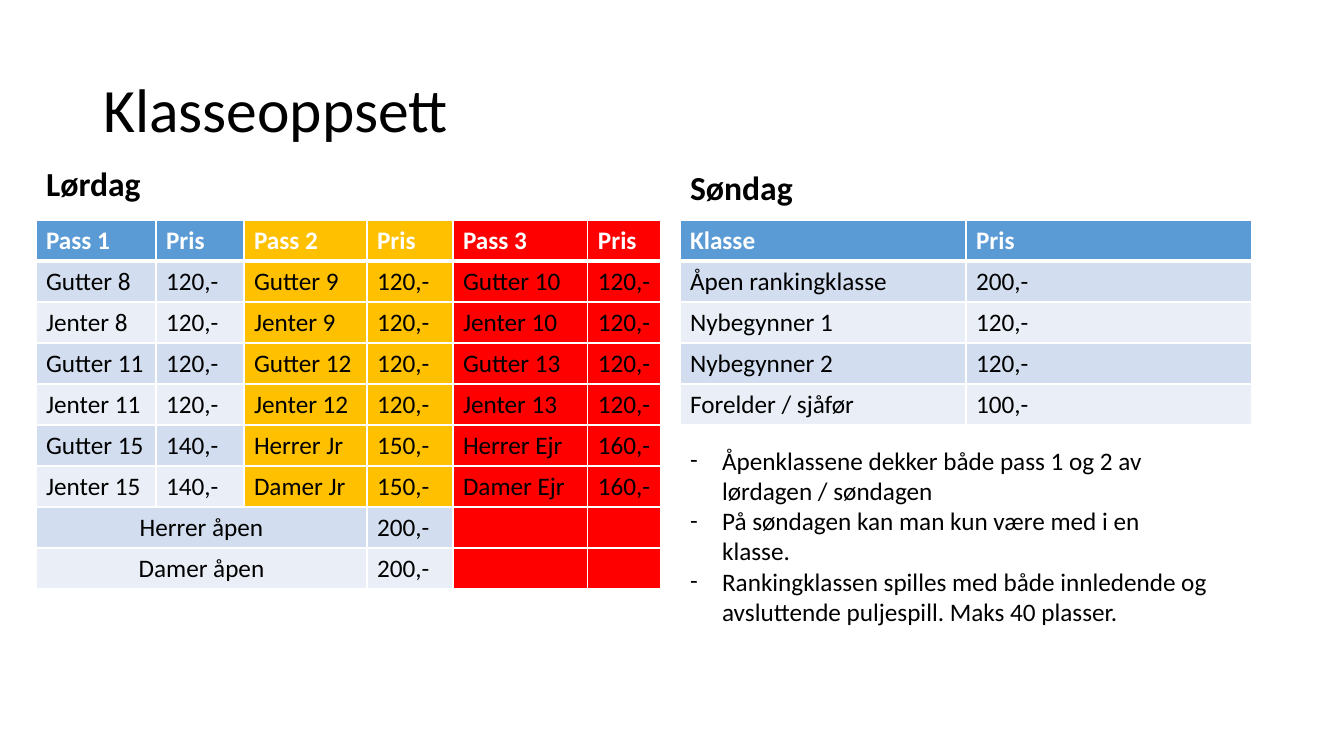
from dataclasses import dataclass

from lxml.etree import SubElement
from pptx import Presentation
from pptx.dml.color import RGBColor as RGB
from pptx.enum.text import MSO_ANCHOR as Anchor, MSO_AUTO_SIZE as AutoSize, PP_ALIGN as Align
from pptx.oxml.ns import qn
from pptx.util import Emu, Pt

EMU_PER_PX = 914400 / 100.8


@dataclass(frozen=True)
class Theme:
    """Colours, font and type sizes of the slide."""
    font: str = "Calibri"
    ink: str = "000000"
    paper: str = "FFFFFF"
    blue: str = "5B9BD5"
    gold: str = "FFC000"
    red: str = "FF0000"
    bands: tuple = ("D2DEEF", "EAEFF7")
    title_size: int = 44
    day_size: int = 24
    text_size: int = 18
    rule: int = 1
    header_rule: int = 3


THEME = Theme()

SATURDAY_WIDTHS = [120, 88, 123, 86, 135, 73]
SATURDAY_ACCENTS = [None, None, THEME.gold, THEME.gold, THEME.red, THEME.red]
SATURDAY = [
    ["Pass 1", "Pris", "Pass 2", "Pris", "Pass 3", "Pris"],
    ["Gutter 8", "120,-", "Gutter 9", "120,-", "Gutter 10", "120,-"],
    ["Jenter 8", "120,-", "Jenter 9", "120,-", "Jenter 10", "120,-"],
    ["Gutter 11", "120,-", "Gutter 12", "120,-", "Gutter 13", "120,-"],
    ["Jenter 11", "120,-", "Jenter 12", "120,-", "Jenter 13", "120,-"],
    ["Gutter 15", "140,-", "Herrer Jr", "150,-", "Herrer Ejr", "160,-"],
    ["Jenter 15", "140,-", "Damer Jr", "150,-", "Damer Ejr", "160,-"],
    ["Herrer åpen", "", "", "200,-", "", ""],
    ["Damer åpen", "", "", "200,-", "", ""],
]
OPEN_CLASS_ROWS = (7, 8)
SUNDAY_WIDTHS = [286, 286]
SUNDAY = [
    ["Klasse", "Pris"],
    ["Åpen rankingklasse", "200,-"],
    ["Nybegynner 1", "120,-"],
    ["Nybegynner 2", "120,-"],
    ["Forelder / sjåfør", "100,-"],
]
RULES = [
    "Åpenklassene dekker både pass 1 og 2 av lørdagen / søndagen",
    "På søndagen kan man kun være med i en klasse.",
    "Rankingklassen spilles med både innledende og avsluttende puljespill. Maks 40 plasser.",
]


def px(length):
    """Turn slide pixels into EMU."""
    return Emu(round(length * EMU_PER_PX))


def style_text(frame, size, color=THEME.ink, bold=False, align=Align.LEFT, leading=1.0):
    """Format every paragraph and run of a text frame."""
    for paragraph in frame.paragraphs:
        paragraph.alignment = align
        paragraph.line_spacing = leading
        paragraph.space_before = Pt(0)
        for run in paragraph.runs:
            run.font.name = THEME.font
            run.font.size = Pt(size)
            run.font.bold = bold
            run.font.color.rgb = RGB.from_string(color)


def place(placeholder, box, anchor):
    """Move a placeholder into its box and return its text frame."""
    placeholder.left, placeholder.top, placeholder.width, placeholder.height = map(px, box)
    frame = placeholder.text_frame
    frame.auto_size = AutoSize.NONE
    frame.word_wrap = True
    frame.vertical_anchor = anchor
    return frame


def fill_heading(placeholder, box, wording, size, anchor, bold):
    """Write a heading into a placeholder."""
    frame = place(placeholder, box, anchor)
    frame.text = wording
    style_text(frame, size, bold=bold, leading=0.9)


def fill_rules(placeholder, box):
    """Write the dashed list of competition rules."""
    frame = place(placeholder, box, Anchor.TOP)
    frame.text = "\n".join(RULES)
    for paragraph in frame.paragraphs:
        properties = paragraph._p.get_or_add_pPr()
        properties.set("marL", str(px(32)))
        properties.set("indent", str(-px(32)))
        SubElement(properties, qn("a:buFont"), typeface=THEME.font)
        SubElement(properties, qn("a:buChar"), char="-")
    style_text(frame, THEME.text_size)


def rule_cell(cell, top, bottom):
    """Draw the white rules around a table cell."""
    properties = cell._tc.get_or_add_tcPr()
    sides = {"L": THEME.rule, "R": THEME.rule, "T": top, "B": bottom}
    for side, weight in sides.items():
        line = SubElement(properties, qn(f"a:ln{side}"), w=str(Pt(weight)))
        SubElement(SubElement(line, qn("a:solidFill")), qn("a:srgbClr"), val=THEME.paper)


def add_price_table(slide, left, top, widths, entries, accents, open_rows=()):
    """Add a table of classes and prices with banded or accented columns."""
    row_height = 41
    table = slide.shapes.add_table(
        len(entries), len(widths), px(left), px(top),
        px(sum(widths)), px(row_height * len(entries))).table
    for column, width in zip(table.columns, widths):
        column.width = px(width)
    for row, labels in enumerate(entries):
        table.rows[row].height = px(row_height)
        header = row == 0
        is_open = row in open_rows
        band = THEME.blue if header else THEME.bands[(row - 1) % 2]
        for col, label in enumerate(labels):
            cell = table.cell(row, col)
            accent = None if is_open and accents[col] == THEME.gold else accents[col]
            rule_cell(cell, THEME.header_rule if row == 1 else THEME.rule,
                      THEME.header_rule if header else THEME.rule)
            cell.fill.solid()
            cell.fill.fore_color.rgb = RGB.from_string(accent or band)
            cell.text_frame.text = label
            style_text(cell.text_frame, THEME.text_size,
                       THEME.paper if header else THEME.ink, header,
                       Align.CENTER if is_open and col == 0 else Align.LEFT)
        if is_open:
            table.cell(row, 0).merge(table.cell(row, 2))


def build_class_slide(deck):
    """Build the slide comparing the classes of both days."""
    slide = deck.slides.add_slide(deck.slide_layouts[4])
    parts = {part.placeholder_format.idx: part for part in slide.placeholders}
    fill_heading(parts[0], (93, 40, 1159, 146), "Klasseoppsett",
                 THEME.title_size, Anchor.MIDDLE, False)
    fill_heading(parts[1], (36, 155, 569, 54), "Lørdag", THEME.day_size, Anchor.BOTTOM, True)
    fill_heading(parts[3], (680, 151, 571, 62), "Søndag", THEME.day_size, Anchor.BOTTOM, True)
    add_price_table(slide, 36, 220, SATURDAY_WIDTHS, SATURDAY, SATURDAY_ACCENTS, OPEN_CLASS_ROWS)
    add_price_table(slide, 680, 220, SUNDAY_WIDTHS, SUNDAY, [None, None])
    fill_rules(parts[4], (680, 440, 542, 193))
    unused = parts[2].element
    unused.getparent().remove(unused)


def main():
    """Create and save the deck."""
    deck = Presentation()
    deck.slide_width, deck.slide_height = px(1344), px(756)
    build_class_slide(deck)
    deck.save("out.pptx")


if __name__ == "__main__":
    main()
